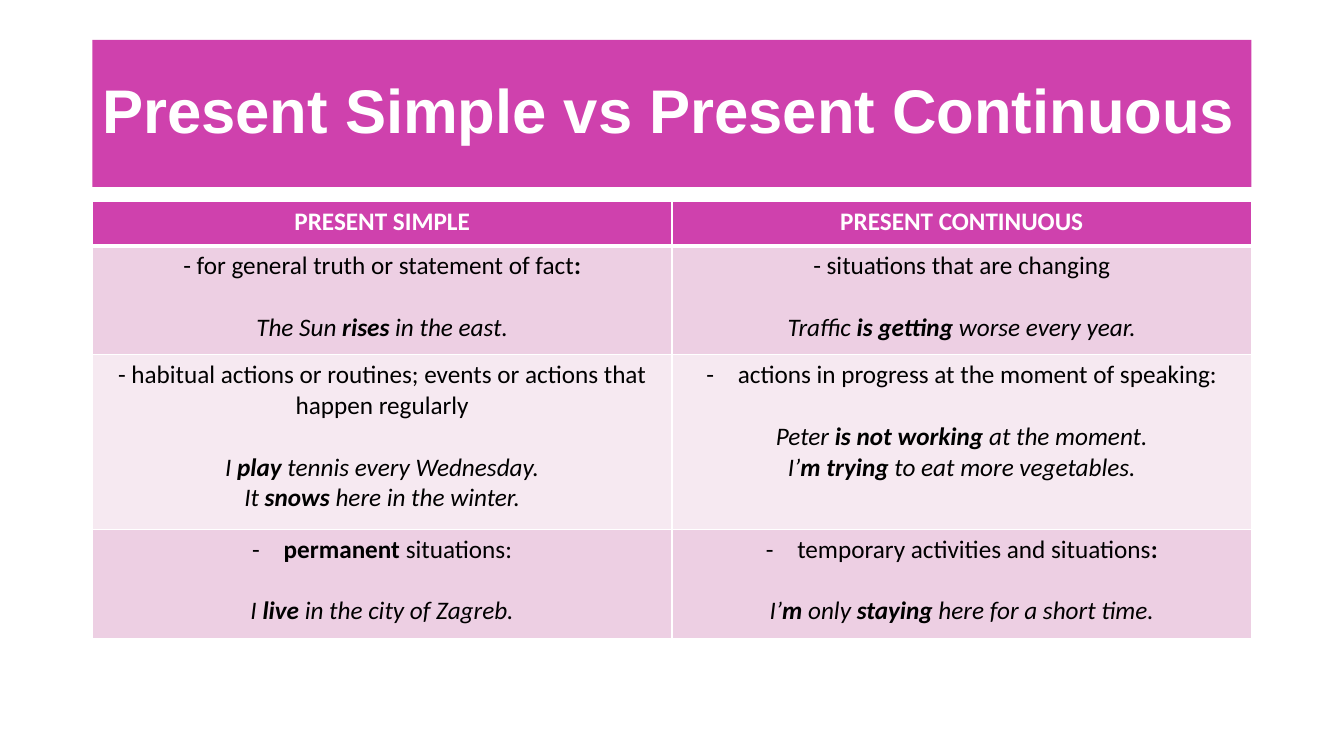
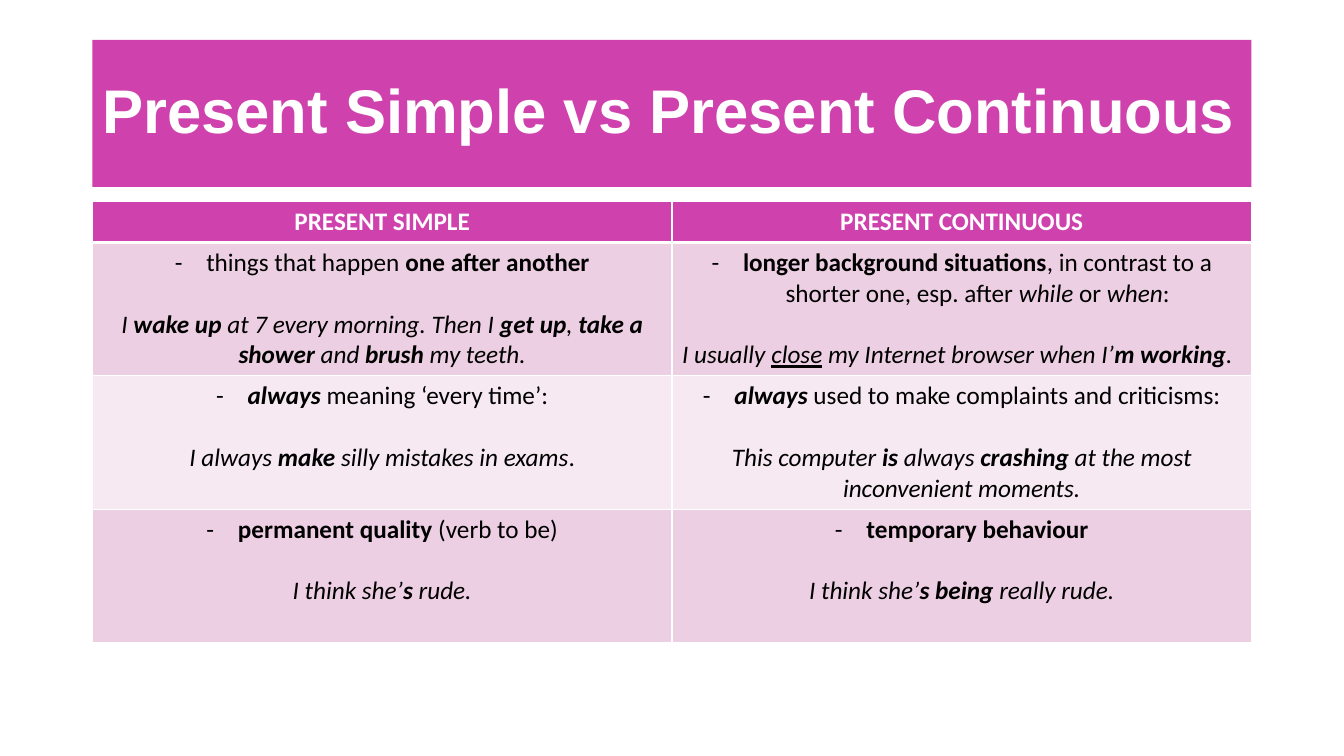
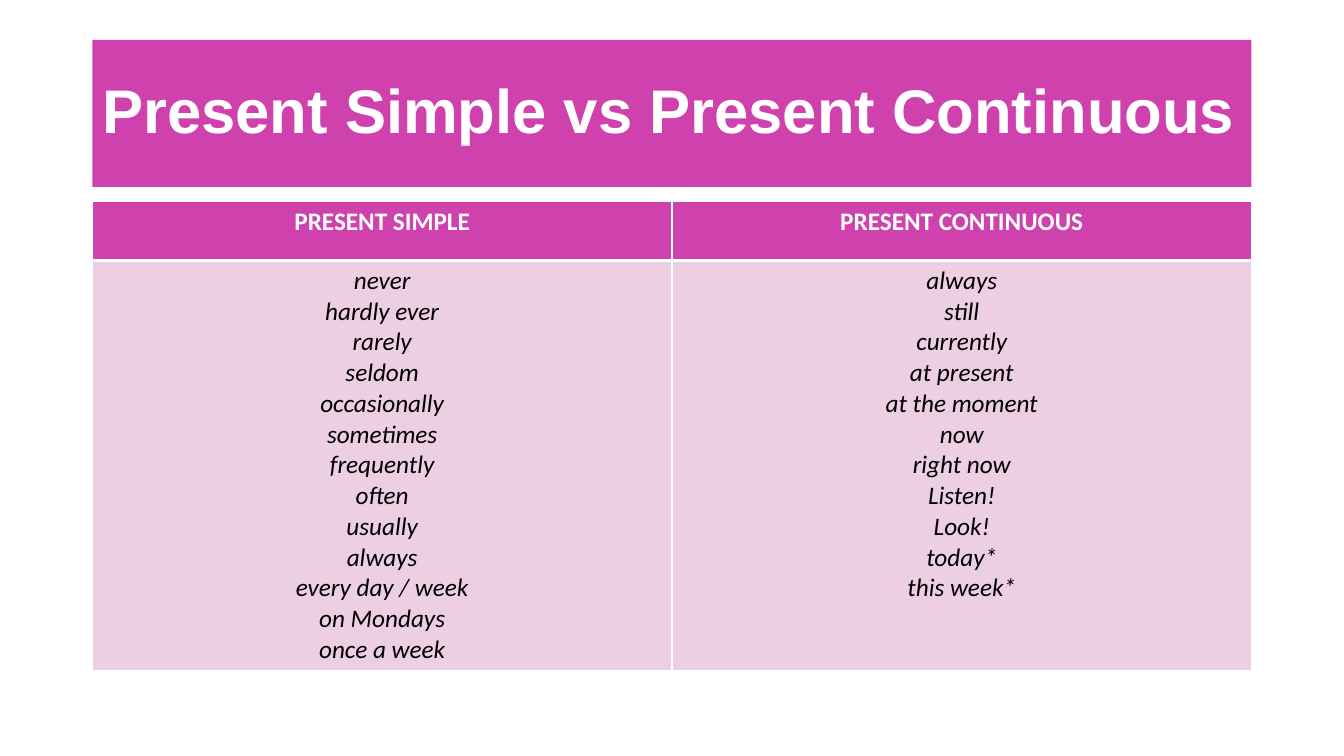
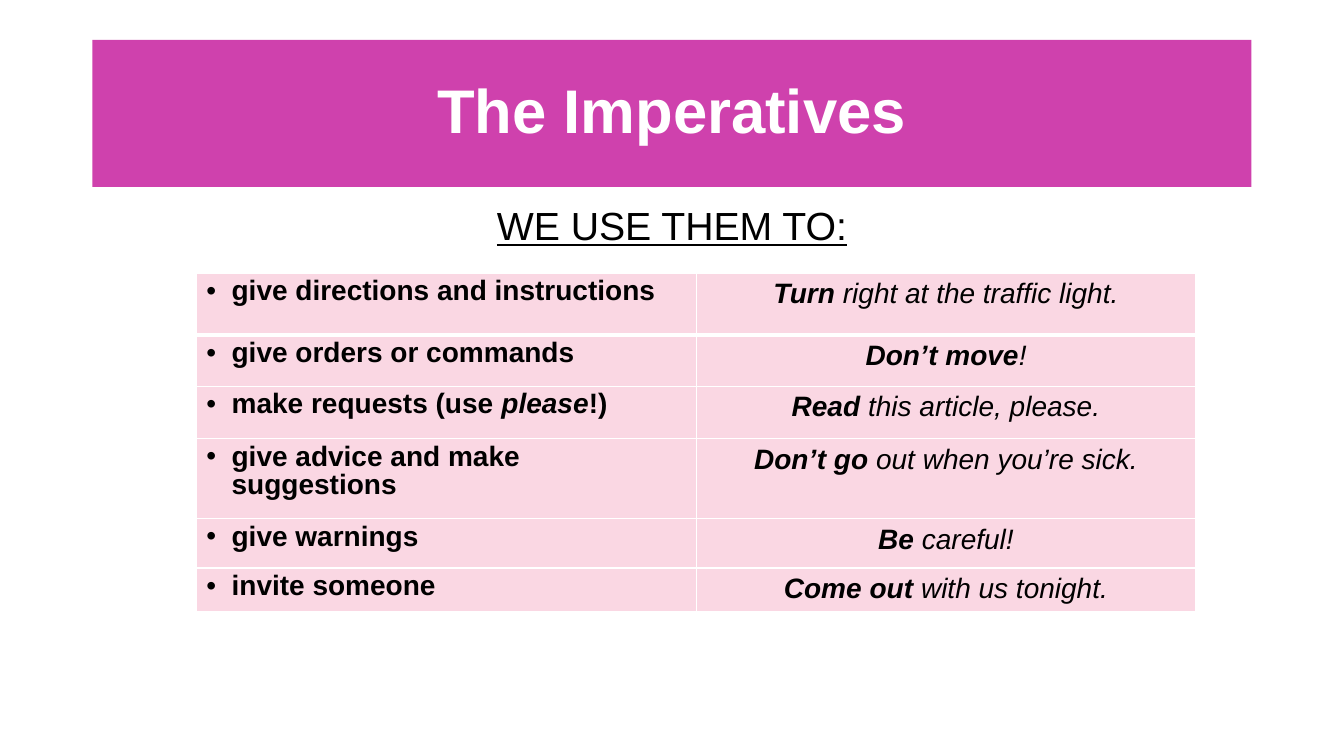
from lxml.etree import SubElement
from pptx import Presentation
from pptx.dml.color import RGBColor
from pptx.enum.shapes import MSO_SHAPE as SHAPE
from pptx.enum.text import MSO_ANCHOR as ANCHOR, PP_ALIGN as ALIGN
from pptx.oxml.ns import qn
from pptx.util import Pt

PX = 9525  # EMU in one px, 96 px to the inch

MAGENTA = RGBColor(0xCF, 0x41, 0xAD)
PINK = RGBColor(0xED, 0xCF, 0xE3)
PALE = RGBColor(0xF6, 0xE9, 0xF1)
ROSE = RGBColor(0xFA, 0xD7, 0xE3)
WHITE = RGBColor(0xFF, 0xFF, 0xFF)
BLACK = RGBColor(0, 0, 0)

LEFT, WIDTH = 88, 1104
TITLE_TOP, TITLE_HEIGHT = 38, 140
BODY_TOP = 192
LINE_GAP = 22  # points, one line of table text


def write(frame, lines, *, font="Calibri", size=18, color=BLACK, align=ALIGN.CENTER,
          spacing=None, gap=0, bullet="-", indent=30):
    """Write paragraphs: ^ toggles bold, _ italic, ~ underline.

    A leading "> " makes a bullet, "< " aligns left; gap comes before the second line.
    """
    frame.word_wrap = True
    for index, line in enumerate(lines):
        para = frame.paragraphs[0] if index == 0 else frame.add_paragraph()
        para.alignment = align
        para.line_spacing = spacing
        if index == 1 and gap:
            para.space_before = Pt(gap)
        if line.startswith("> "):
            props = para._p.get_or_add_pPr()
            props.set("marL", str(indent * PX))
            props.set("indent", str(-indent * PX))
            SubElement(props, qn("a:buFont")).set("typeface", font)
            SubElement(props, qn("a:buChar")).set("char", bullet)
        elif line.startswith("< "):
            para.alignment = ALIGN.LEFT
        italic = underline = False
        for bold_turn, bold_part in enumerate(line.removeprefix("> ").removeprefix("< ").split("^")):
            for italic_turn, italic_part in enumerate(bold_part.split("_")):
                italic ^= italic_turn > 0
                for line_turn, text in enumerate(italic_part.split("~")):
                    underline ^= line_turn > 0
                    if not text:
                        continue
                    span = para.add_run()
                    span.text = text
                    span.font.name = font
                    span.font.size = Pt(size)
                    span.font.color.rgb = color
                    span.font.bold = bold_turn % 2 == 1
                    span.font.italic = italic
                    span.font.underline = underline


def paint(cell, fill, top=1, bottom=1):
    """Give a table cell white borders, in points, and a fill."""
    props = cell._tc.get_or_add_tcPr()
    for side, points in (("L", 1), ("R", 1), ("T", top), ("B", bottom)):
        border = SubElement(props, qn(f"a:ln{side}"))
        border.set("w", str(Pt(points)))
        SubElement(SubElement(border, qn("a:solidFill")), qn("a:srgbClr")).set("val", str(WHITE))
    cell.fill.solid()
    cell.fill.fore_color.rgb = fill


# Content: each cell is a list of lines
VERSUS = "^Present Simple vs Present Continuous"
HEADINGS = (["^PRESENT SIMPLE"], ["^PRESENT CONTINUOUS"])

uses = [
    HEADINGS,
    (["- for general truth or statement of fact^:", "_The Sun ^rises^ in the east."],
     ["- situations that are changing", "_Traffic ^is getting ^worse every year."]),
    (["- habitual actions or routines; events or actions that happen regularly",
      "_I ^play^ tennis every Wednesday.", "_It ^snows^ here in the winter."],
     ["> actions in progress at the moment of speaking:",
      "_Peter ^is not working ^at the moment.", "_I’^m trying ^to eat more vegetables."]),
    (["> ^permanent^ situations:", "_I ^live^ in the city of Zagreb."],
     ["> temporary activities and situations^:",
      "_I’^m^ only ^staying^ here for a short time."]),
]
contrasts = [
    HEADINGS,
    (["> things that happen ^one after another",
      "_I ^wake up ^at 7 every morning. Then I ^get up^, ^take a shower ^and ^brush^ my teeth."],
     ["> ^longer background situations^, in contrast to a shorter one, esp. after _while_ or _when_:",
      "< _I usually ~close~ my Internet browser when I’^m working^."]),
    (["> ^_always_^ meaning ‘every time’:", "_I always ^make^ silly mistakes in exams_."],
     ["> ^_always_^ used to make complaints and criticisms:",
      "_This computer ^is^ always ^crashing^ at the most inconvenient moments."]),
    (["> ^permanent quality^ (verb to be)", "_I think she’^s^ rude."],
     ["> ^temporary behaviour", "_I think she’^s being ^really rude."]),
]
signals = [
    HEADINGS,
    (["_never", "_hardly ever", "_rarely", "_seldom", "_occasionally", "_sometimes",
      "_frequently", "_often", "_usually", "_always", "_every day / week", "_on Mondays",
      "_once a week"],
     ["_always", "_still", "_currently", "_at present", "_at the moment", "_now",
      "_right now", "_Listen!", "_Look!", "_today*", "_this week*"]),
]
imperatives = [
    (["> ^give directions and instructions"], ["_^Turn^ right at the traffic light."]),
    (["> ^give orders or commands"], ["_^Don’t move^!"]),
    (["> ^make requests (use _please_!)"], ["_^Read^ this article, please."]),
    (["> ^give advice and make suggestions"], ["_^Don’t go ^out when you’re sick."]),
    (["> ^give warnings"], ["_^Be^ careful!"]),
    (["> ^invite someone"], ["_^Come out ^with us tonight."]),
]

# Title, subtitle, table rows, row heights, table left, top and width, gap
PAGES = [
    (VERSUS, None, uses, (42, 104, 166, 104), LEFT, BODY_TOP, WIDTH, LINE_GAP),
    (VERSUS, None, contrasts, (38, 127, 127, 127), LEFT, BODY_TOP, WIDTH, LINE_GAP),
    (VERSUS, None, signals, (56, 391), LEFT, BODY_TOP, WIDTH, 0),
    ("^The Imperatives", "~WE USE THEM TO:", imperatives, (59, 49, 50, 76, 47, 42),
     187, 260, 952, 0),
]

deck = Presentation()
deck.slide_width, deck.slide_height = 1280 * PX, 720 * PX

for title, subtitle, rows, heights, left, top, width, gap in PAGES:
    page = deck.slides.add_slide(deck.slide_layouts[6])

    # Title band
    band = page.shapes.add_shape(SHAPE.RECTANGLE, LEFT * PX, TITLE_TOP * PX,
                                 WIDTH * PX, TITLE_HEIGHT * PX)
    band.shadow.inherit = False
    band.fill.solid()
    band.fill.fore_color.rgb = MAGENTA
    band.line.fill.background()
    band.text_frame.vertical_anchor = ANCHOR.MIDDLE
    write(band.text_frame, [title], font="Arial", size=44, color=WHITE, spacing=0.9,
          align=ALIGN.CENTER if subtitle else ALIGN.LEFT)

    # Subtitle
    if subtitle:
        box = page.shapes.add_textbox(LEFT * PX, BODY_TOP * PX, WIDTH * PX, 48 * PX)
        write(box.text_frame, [subtitle], font="Arial", size=28, spacing=0.9)

    # Table
    table = page.shapes.add_table(len(rows), 2, left * PX, top * PX,
                                  width * PX, sum(heights) * PX).table
    table.first_row = table.horz_banding = False
    for column in table.columns:
        column.width = width // 2 * PX
    for row, (cells, height) in enumerate(zip(rows, heights)):
        table.rows[row].height = height * PX
        heading = cells is HEADINGS
        for column, lines in enumerate(cells):
            cell = table.cell(row, column)
            if subtitle:
                fill = ROSE
                style = dict(font="Arial", size=20, bullet="•", indent=24)
                if column == 0:
                    style.update(align=ALIGN.LEFT, spacing=0.9)
            else:
                fill = MAGENTA if heading else PINK if row % 2 else PALE
                style = dict(color=WHITE if heading else BLACK, gap=gap)
            paint(cell, fill, top=3 if row == 1 else 1, bottom=3 if row == 0 else 1)
            write(cell.text_frame, lines, **style)

deck.save("out.pptx")
